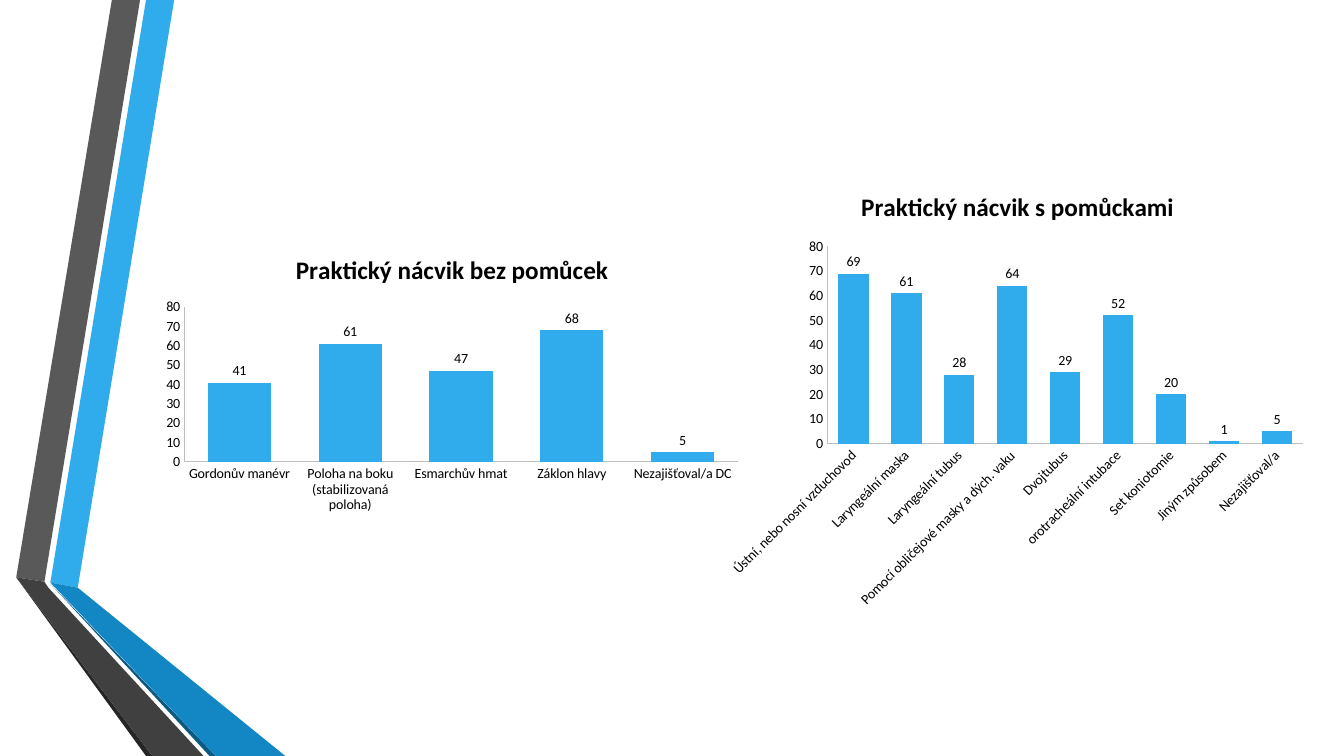
from lxml import etree
from pptx import Presentation
from pptx.chart.data import CategoryChartData
from pptx.dml.color import RGBColor
from pptx.enum.chart import XL_CHART_TYPE as ChartType
from pptx.enum.chart import XL_LABEL_POSITION as LabelPos
from pptx.enum.chart import XL_TICK_MARK as Tick
from pptx.oxml.ns import qn
from pptx.util import Cm, Pt

BOTTOM = 19.05

RIBBONS = [
    ("30ACEC", [(1.27, 14.68), (1.96, 14.81), (4.39, 0), (3.68, 0)]),
    ("595959", [(3.53, 0), (2.82, 0), (0.41, 14.55), (1.12, 14.66)]),
    ("262626", [(0.41, 14.55), (3.68, BOTTOM), (3.84, BOTTOM)]),
    ("0C5A82", [(1.27, 14.71), (5.28, BOTTOM), (5.44, BOTTOM)]),
    ("1287C3", [(1.27, 14.68), (5.44, BOTTOM), (7.19, BOTTOM), (1.96, 14.81)]),
    ("404040", [(5.13, BOTTOM), (1.22, 14.81), (1.12, 14.66), (0.41, 14.55),
                (3.84, BOTTOM)]),
]

WITHOUT_AIDS = {
    "Gordonův manévr": 41,
    "Poloha na boku (stabilizovaná poloha)": 61,
    "Esmarchův hmat": 47,
    "Záklon hlavy": 68,
    "Nezajišťoval/a DC": 5,
}

WITH_AIDS = {
    "Ústní, nebo nosní vzduchovod": 69,
    "Laryngeální maska": 61,
    "Laryngeální tubus": 28,
    "Pomocí obličejové masky a dých. vaku": 64,
    "Dvojtubus": 29,
    "orotracheální intubace": 52,
    "Set koniotomie": 20,
    "Jiným způsobem": 1,
    "Nezajišťoval/a": 5,
}


def rgb(value):
    """Turn a hex string into a colour."""
    return RGBColor.from_string(value)


class SlideBuilder:
    """Hold the style and the current slide."""

    font = "Calibri"
    text = "000000"
    bar = "30ACEC"
    axis_line = "BFBFBF"

    def __init__(self, slide):
        """Keep the slide to draw on."""
        self.slide = slide

    def style_font(self, font, size, bold=False):
        """Apply the text style to a font."""
        font.name = self.font
        font.size = Pt(size)
        font.bold = bold
        font.color.rgb = rgb(self.text)

    def ribbon(self, color, points):
        """Draw a filled polygon through points in centimetres."""
        start, *rest = [(Cm(x), Cm(y)) for x, y in points]
        builder = self.slide.shapes.build_freeform(*start)
        builder.add_line_segments(rest, close=True)
        sp = builder.convert_to_shape()
        sp.shadow.inherit = False
        sp.fill.solid()
        sp.fill.fore_color.rgb = rgb(color)
        sp.line.fill.background()

    def place_plot(self, chart, box):
        """Set the inner plot area as fractions of the chart."""
        area = chart.element.find(".//" + qn("c:plotArea"))
        for old in area.findall(qn("c:layout")):
            area.remove(old)
        layout = etree.Element(qn("c:layout"))
        manual = etree.SubElement(layout, qn("c:manualLayout"))
        values = [("layoutTarget", "inner"), ("xMode", "edge"), ("yMode", "edge")]
        values += zip("xywh", box)
        for tag, value in values:
            etree.SubElement(manual, qn("c:" + tag)).set("val", str(value))
        area.insert(0, layout)

    def style_axis(self, axis, angle=0):
        """Format an axis and turn its labels by an angle in degrees."""
        axis.has_major_gridlines = False
        axis.major_tick_mark = Tick.NONE
        axis.minor_tick_mark = Tick.NONE
        axis.format.line.color.rgb = rgb(self.axis_line)
        axis.format.line.width = Pt(0.75)
        self.style_font(axis.tick_labels.font, 10)
        if angle:
            body = axis._element.find(qn("c:txPr")).find(qn("a:bodyPr"))
            body.set("rot", str(angle * 60000))
            body.set("vert", "horz")

    def column_chart(self, title, counts, box, plot, angle=0):
        """Add a titled column chart with value labels."""
        data = CategoryChartData()
        data.categories = list(counts)
        data.add_series("Series 1", list(counts.values()))
        frame = self.slide.shapes.add_chart(
            ChartType.COLUMN_CLUSTERED, *map(Cm, box), data)
        chart = frame.chart
        self.style_font(chart.font, 10)
        chart.has_legend = False
        chart.has_title = True
        tf = chart.chart_title.text_frame
        tf.text = title
        self.style_font(tf.paragraphs[0].runs[0].font, 18, True)
        chart.chart_title.include_in_layout = False

        self.style_axis(chart.category_axis, angle)
        self.style_axis(chart.value_axis)
        chart.value_axis.minimum_scale = 0
        chart.value_axis.maximum_scale = 80
        chart.value_axis.major_unit = 10

        columns = chart.plots[0]
        columns.gap_width = 75
        columns.vary_by_categories = False
        fill = columns.series[0].format.fill
        fill.solid()
        fill.fore_color.rgb = rgb(self.bar)
        labels = columns.series[0].data_labels
        labels.show_value = True
        labels.position = LabelPos.OUTSIDE_END
        self.style_font(labels.font, 10)
        self.place_plot(chart, plot)


def main():
    """Build and save the slide."""
    prs = Presentation()
    prs.slide_width, prs.slide_height = Cm(33.87), Cm(BOTTOM)
    s = SlideBuilder(prs.slides.add_slide(prs.slide_layouts[6]))
    for color, points in RIBBONS:
        s.ribbon(color, points)
    s.column_chart("Praktický nácvik bez pomůcek", WITHOUT_AIDS,
                   (3.89, 5.97, 15.01, 7.09), (0.05, 0.25, 0.93, 0.55))
    s.column_chart("Praktický nácvik s pomůckami", WITH_AIDS,
                   (18.14, 4.29, 15.01, 11.3), (0.18, 0.17, 0.8, 0.44), -45)
    prs.save("out.pptx")


if __name__ == "__main__":
    main()
